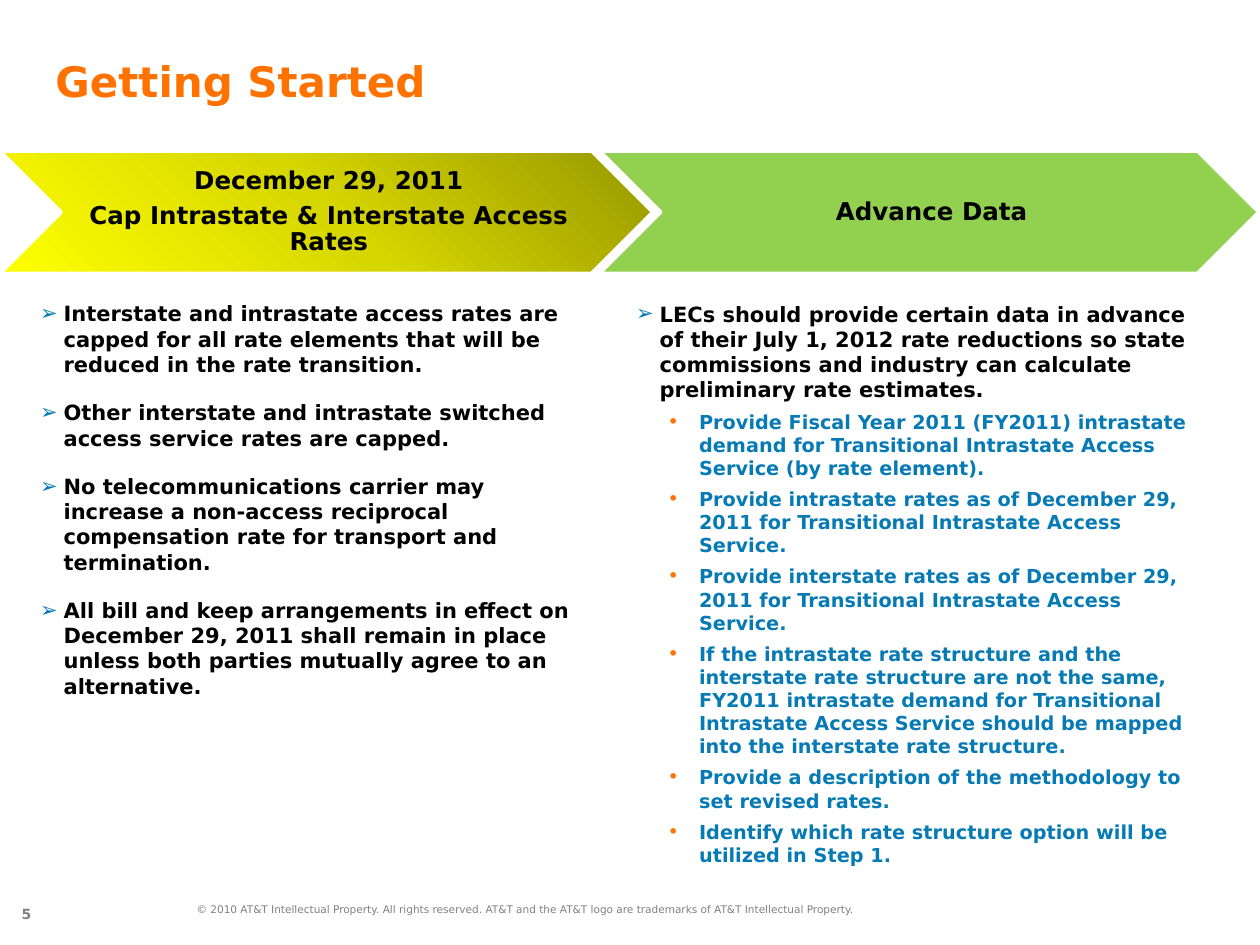
import pptx
import pptx.util
import pptx.oxml
from pptx.dml.color import RGBColor
from pptx.enum.shapes import MSO_SHAPE
from pptx.enum.text import MSO_ANCHOR, MSO_AUTO_SIZE, PP_ALIGN
from pptx.oxml.ns import nsdecls, qn

Pt = pptx.util.Pt
FONT = "DejaVu Sans"
COLORS = {
    "orange": "FF7200", "blue": "067AB4", "gray": "808080", "black": "000000",
    "white": "FFFFFF", "green": "92D050",
    "olive": "979700", "mustard": "D7D700", "yellow": "FFFF00",
}

# Content
TITLE = "Getting Started"
PAGE_NUMBER = "5"
COPYRIGHT = ("© 2010 AT&T Intellectual Property. All rights reserved. AT&T and the "
             "AT&T logo are trademarks of AT&T Intellectual Property.")

# Chevron: left, width, fill (None means the yellow gradient), lines
CHEVRONS = [
    (0, 373, None, ["December 29, 2011", "Cap Intrastate & Interstate Access Rates"]),
    (342.7, 376.6, "green", ["Advance Data"]),
]
CHEVRON_TOP, CHEVRON_HEIGHT = 86.4, 69.8

# Column: left, width, height, (level, text) items
COLUMNS = [
    (15.8, 318.2, 237.6, [
        (0, "Interstate and intrastate access rates are capped for all rate elements "
            "that will be reduced in the rate transition."),
        (0, "Other interstate and intrastate switched access service rates are capped."),
        (0, "No telecommunications carrier may increase a non-access reciprocal "
            "compensation rate for transport and termination."),
        (0, "All bill and keep arrangements in effect on December 29, 2011 shall remain "
            "in place unless both parties mutually agree to an alternative."),
    ]),
    (356.4, 344.9, 334, [
        (0, "LECs should provide certain data in advance of their July 1, 2012 rate "
            "reductions so state commissions and industry can calculate preliminary "
            "rate estimates."),
        (1, "Provide Fiscal Year 2011 (FY2011) intrastate demand for Transitional "
            "Intrastate Access Service (by rate element)."),
        (1, "Provide intrastate rates as of December 29, 2011 for Transitional "
            "Intrastate Access Service."),
        (1, "Provide interstate rates as of December 29, 2011 for Transitional "
            "Intrastate Access Service."),
        (1, "If the intrastate rate structure and the interstate rate structure are not "
            "the same, FY2011 intrastate demand for Transitional Intrastate Access "
            "Service should be mapped into the interstate rate structure."),
        (1, "Provide a description of the methodology to set revised rates."),
        (1, "Identify which rate structure option will be utilized in Step 1."),
    ]),
]
COLUMN_TOP = 168.5

# Level: bullet, bullet color, indent, hanging, size, text color, space before
LEVELS = [
    ("➢", "blue", 13.5, 13.5, 12, "black", 13.3),
    ("•", "orange", 36, 18, 11, "blue", 4.6),
]


def color(name):
    return RGBColor.from_string(COLORS[name])


def set_font(paragraph, size, color_name, bold=True):
    font = paragraph.font
    font.name, font.size, font.bold = FONT, Pt(size), bold
    font.color.rgb = color(color_name)


def set_margins(frame, left, top, right, bottom):
    frame.margin_left, frame.margin_top = Pt(left), Pt(top)
    frame.margin_right, frame.margin_bottom = Pt(right), Pt(bottom)


def add_text_box(slide, left, top, width, height):
    frame = slide.shapes.add_textbox(Pt(left), Pt(top), Pt(width), Pt(height)).text_frame
    frame.word_wrap = True
    return frame


def add_paragraphs(frame, texts):
    for index, text in enumerate(texts):
        paragraph = frame.add_paragraph() if index else frame.paragraphs[0]
        paragraph.text = text
        yield index, paragraph


def set_bullet(paragraph, character, color_name, indent, hanging):
    properties = paragraph._p.get_or_add_pPr()
    properties.set("marL", str(Pt(indent)))
    properties.set("indent", str(-Pt(hanging)))
    for xml in (f'<a:buClr {nsdecls("a")}><a:srgbClr val="{COLORS[color_name]}"/></a:buClr>',
                f'<a:buFont {nsdecls("a")} typeface="{FONT}"/>',
                f'<a:buChar {nsdecls("a")} char="{character}"/>'):
        properties.append(pptx.oxml.parse_xml(xml))


def fill_corner_gradient(shape, names):
    """Radial gradient that starts in the top right corner."""
    step = 100000 // (len(names) - 1)
    stops = "".join(f'<a:gs pos="{index * step}"><a:srgbClr val="{COLORS[name]}"/></a:gs>'
                    for index, name in enumerate(names))
    shape.fill.solid()
    solid = shape._element.spPr.find(qn("a:solidFill"))
    solid.getparent().replace(solid, pptx.oxml.parse_xml(
        f'<a:gradFill {nsdecls("a")} rotWithShape="1"><a:gsLst>{stops}</a:gsLst>'
        '<a:path path="circle"><a:fillToRect l="100000" b="100000"/></a:path></a:gradFill>'))


def add_chevron(slide, left, width, fill, lines):
    shape = slide.shapes.add_shape(MSO_SHAPE.CHEVRON, Pt(left), Pt(CHEVRON_TOP),
                                   Pt(width), Pt(CHEVRON_HEIGHT))
    shape.shadow.inherit = False
    shape.line.color.rgb = color("white")
    shape.line.width = Pt(2)
    if fill:
        shape.fill.solid()
        shape.fill.fore_color.rgb = color(fill)
    else:
        fill_corner_gradient(shape, ["olive", "mustard", "yellow"])
    frame = shape.text_frame
    frame.word_wrap = True
    frame.vertical_anchor = MSO_ANCHOR.MIDDLE
    set_margins(frame, 4.2, 1.4, 1.4, 1.4)
    for _, paragraph in add_paragraphs(frame, lines):
        paragraph.alignment = PP_ALIGN.CENTER
        paragraph.line_spacing = 0.9
        paragraph.space_after = Pt(4.9)
        set_font(paragraph, 14, "black")


def add_column(slide, left, width, height, items):
    frame = add_text_box(slide, left, COLUMN_TOP, width, height)
    frame.auto_size = MSO_AUTO_SIZE.SHAPE_TO_FIT_TEXT
    for index, paragraph in add_paragraphs(frame, [text for _, text in items]):
        bullet, bullet_color, indent, hanging, size, text_color, gap = LEVELS[items[index][0]]
        if index:
            paragraph.space_before = Pt(gap)
        set_bullet(paragraph, bullet, bullet_color, indent, hanging)
        set_font(paragraph, size, text_color)


def main():
    presentation = pptx.Presentation()
    presentation.slide_width, presentation.slide_height = Pt(720), Pt(540)
    slide = presentation.slides.add_slide(presentation.slide_layouts[5])

    # Title
    title = slide.shapes.title
    title.left, title.top, title.width, title.height = Pt(31.7), Pt(30.2), Pt(656.6), Pt(55.4)
    frame = title.text_frame
    frame.text = TITLE
    frame.auto_size = MSO_AUTO_SIZE.NONE
    frame.vertical_anchor = MSO_ANCHOR.TOP
    set_margins(frame, 0, 0, 0, 0)
    paragraph = frame.paragraphs[0]
    paragraph.alignment = PP_ALIGN.LEFT
    paragraph.line_spacing = 1.05
    set_font(paragraph, 24, "orange")

    # Step banners and the bullets under them
    for chevron in CHEVRONS:
        add_chevron(slide, *chevron)
    for column in COLUMNS:
        add_column(slide, *column)

    # Footer
    for text, box, size, bold, alignment in [
        (COPYRIGHT, (112.3, 516.2, 432.7, 7.2), 6, False, PP_ALIGN.LEFT),
        (PAGE_NUMBER, (0, 517.7, 30.2, 12.2), 8, True, PP_ALIGN.CENTER),
    ]:
        frame = add_text_box(slide, *box)
        set_margins(frame, 0, 0, 0, 0)
        paragraph = frame.paragraphs[0]
        paragraph.text = text
        paragraph.alignment = alignment
        set_font(paragraph, size, "gray", bold)

    presentation.save("out.pptx")


if __name__ == "__main__":
    main()
